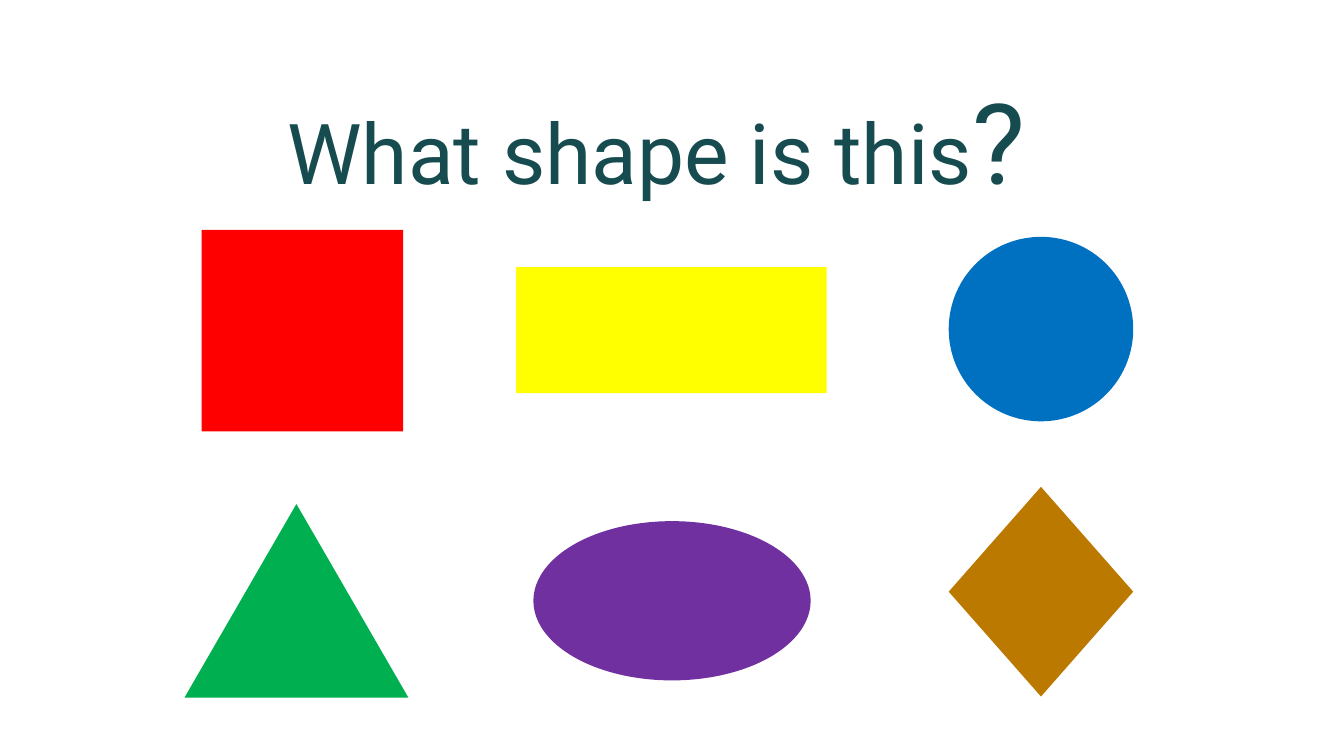
from pptx import Presentation
from pptx import util as u
from pptx.dml import color
from pptx.enum import shapes, text

COLORS = {
    "teal": "164B4F", "red": "FF0000", "yellow": "FFFF00", "blue": "0070C0",
    "green": "00B050", "purple": "7030A0", "brown": "BC7900",
}
KIND = shapes.MSO_SHAPE


def add_run(para, words, size=60, font="Roboto", hue="teal"):
    run = para.add_run()
    run.text = words
    run.font.size = u.Pt(size)
    run.font.name = font
    run.font.color.rgb = color.RGBColor.from_string(COLORS[hue])


deck = Presentation()
deck.slide_width, deck.slide_height = u.Inches(13.33), u.Inches(7.5)
slide = deck.slides.add_slide(deck.slide_layouts[5])

# Title with a larger question mark
title = slide.shapes.title
title.left, title.top = u.Inches(2.75), u.Inches(0.67)
title.width, title.height = u.Inches(7.96), u.Inches(1.45)
frame = title.text_frame
frame.word_wrap = False
frame.auto_size = text.MSO_AUTO_SIZE.NONE
frame.vertical_anchor = text.MSO_ANCHOR.TOP
para = frame.paragraphs[0]
para.alignment = text.PP_ALIGN.LEFT
add_run(para, "What shape is this")
add_run(para, "?", size=80)

# Two rows of figures: kind, colour, left, top, width, height
FIGURES = [
    (KIND.RECTANGLE, "red", 2, 2.28, 2, 2),
    (KIND.RECTANGLE, "yellow", 5.12, 2.65, 3.08, 1.25),
    (KIND.OVAL, "blue", 9.41, 2.35, 1.83, 1.83),
    (KIND.ISOSCELES_TRIANGLE, "green", 1.83, 5, 2.22, 1.92),
    (KIND.OVAL, "purple", 5.29, 5.17, 2.75, 1.58),
    (KIND.DIAMOND, "brown", 9.41, 4.83, 1.83, 2.08),
]
for kind, hue, *box in FIGURES:
    figure = slide.shapes.add_shape(kind, *map(u.Inches, box))
    figure.shadow.inherit = False
    figure.fill.solid()
    figure.fill.fore_color.rgb = color.RGBColor.from_string(COLORS[hue])
    figure.line.fill.background()

deck.save("out.pptx")
